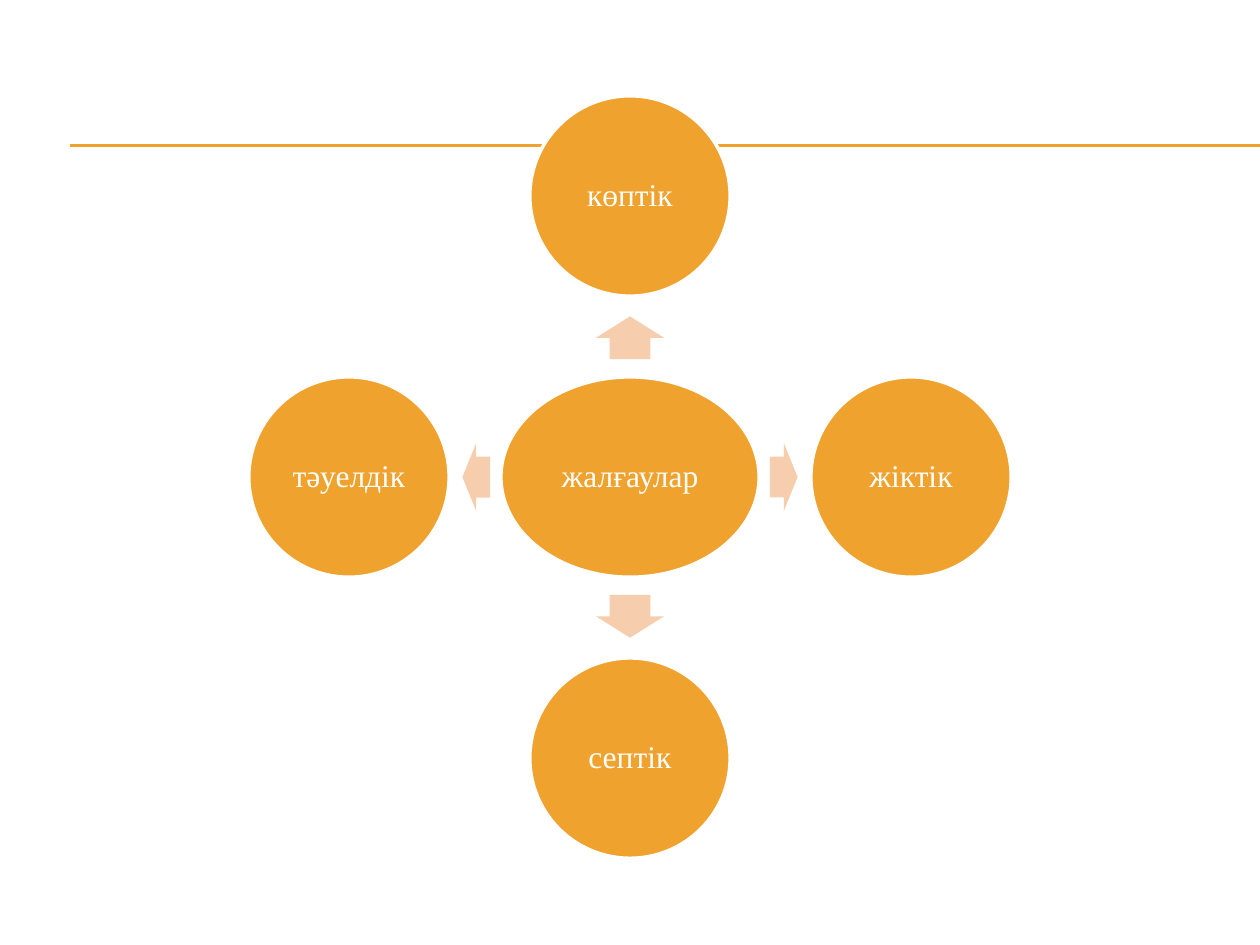
from dataclasses import dataclass

from lxml import etree
from pptx import Presentation
from pptx.dml.color import RGBColor
from pptx.enum.shapes import MSO_CONNECTOR, MSO_SHAPE
from pptx.enum.text import MSO_ANCHOR, PP_ALIGN
from pptx.oxml.ns import qn
from pptx.util import Pt

ELLIPSE, ARROW = MSO_SHAPE.OVAL, MSO_SHAPE.RIGHT_ARROW
STRAIGHT = MSO_CONNECTOR.STRAIGHT
CENTER, MIDDLE = PP_ALIGN.CENTER, MSO_ANCHOR.MIDDLE


@dataclass(frozen=True)
class Theme:
    accent: RGBColor = RGBColor(0xF0, 0xA2, 0x2E)
    arrow: RGBColor = RGBColor(0xF6, 0xCE, 0xAD)
    white: RGBColor = RGBColor(0xFF, 0xFF, 0xFF)
    font: str = "Times New Roman"
    size: float = 18
    outline: float = 2
    rule: float = 0.75


@dataclass(frozen=True)
class Spoke:
    text: str
    dx: int
    dy: int
    angle: int


THEME = Theme()
SLIDE_W, SLIDE_H = 720, 540

# Diagram geometry, in points
CX, CY = 360, 272.6
DIAMETER, HUB_W = 114.5, 147.6
RADIUS = 160.6
ARROW_W = 38.9
ARROW_GAP_X, ARROW_LEN_X = 87.9, 15.8
ARROW_GAP_Y, ARROW_LEN_Y = 79.6, 24.4

SPOKES = [
    Spoke("көптік", 0, -1, 270),
    Spoke("жіктік", 1, 0, 0),
    Spoke("септік", 0, 1, 90),
    Spoke("тәуелдік", -1, 0, 180),
]


def add_centered(slide, kind, cx: float, cy: float, w: float, h: float, fill: RGBColor):
    s = slide.shapes.add_shape(kind, Pt(cx - w / 2), Pt(cy - h / 2), Pt(w), Pt(h))
    s.shadow.inherit = False
    s.fill.solid()
    s.fill.fore_color.rgb = fill
    return s


def add_node(slide, text: str, cx: float, cy: float, width: float = DIAMETER) -> None:
    s = add_centered(slide, ELLIPSE, cx, cy, width, DIAMETER, THEME.accent)
    s.line.color.rgb = THEME.white
    s.line.width = Pt(THEME.outline)
    tf = s.text_frame
    frame = {"word_wrap": True, "vertical_anchor": MIDDLE}
    frame.update({f"margin_{side}": Pt(2) for side in ("left", "top", "right", "bottom")})
    for name, value in frame.items():
        setattr(tf, name, value)
    p = tf.paragraphs[0]
    p.alignment, p.line_spacing = CENTER, 0.9
    r = p.add_run()
    r.text = text
    for name, value in {"name": THEME.font, "size": Pt(THEME.size)}.items():
        setattr(r.font, name, value)
    r.font.color.rgb = THEME.white


def add_arrow(slide, spoke: Spoke) -> None:
    length = ARROW_LEN_X if spoke.dx else ARROW_LEN_Y
    s = add_centered(slide, ARROW, CX + spoke.dx * ARROW_GAP_X,
                     CY + spoke.dy * ARROW_GAP_Y, length, ARROW_W, THEME.arrow)
    s.line.fill.background()
    s.rotation = spoke.angle
    s.adjustments[0], s.adjustments[1] = 0.6, 0.5


def add_rule(slide, y: float) -> None:
    s = slide.shapes.add_connector(STRAIGHT, Pt(40.3), Pt(y), Pt(SLIDE_W), Pt(y))
    s.line.color.rgb = THEME.accent
    s.line.width = Pt(THEME.rule)
    etree.SubElement(s._element.spPr, qn("a:effectLst"))


def main() -> None:
    prs = Presentation()
    prs.slide_width, prs.slide_height = Pt(SLIDE_W), Pt(SLIDE_H)
    slide = prs.slides.add_slide(prs.slide_layouts[6])

    # Double rule behind the diagram
    for y in (82.8, 83.5):
        add_rule(slide, y)

    # Hub, then an arrow and a circle in each direction
    add_node(slide, "жалғаулар", CX, CY, HUB_W)
    for spoke in SPOKES:
        add_arrow(slide, spoke)
        add_node(slide, spoke.text, CX + spoke.dx * RADIUS, CY + spoke.dy * RADIUS)

    prs.save("out.pptx")


if __name__ == "__main__":
    main()
